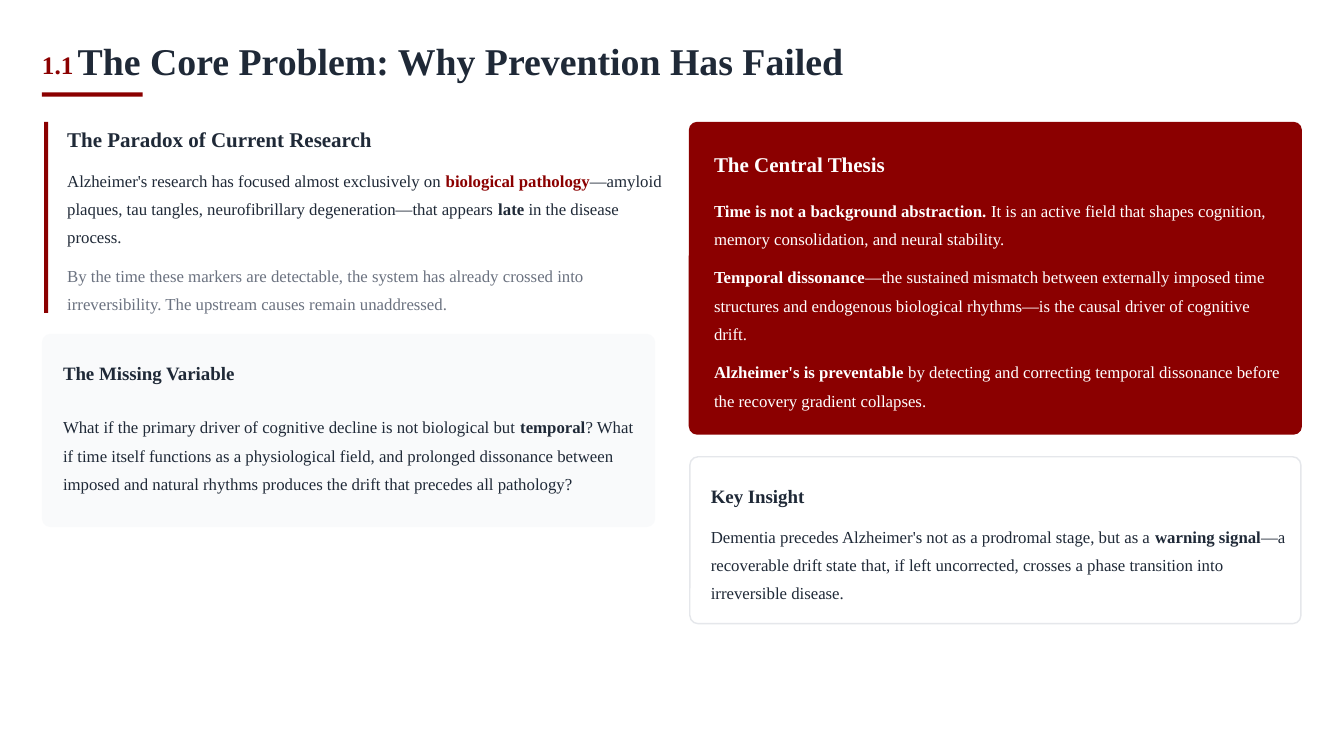
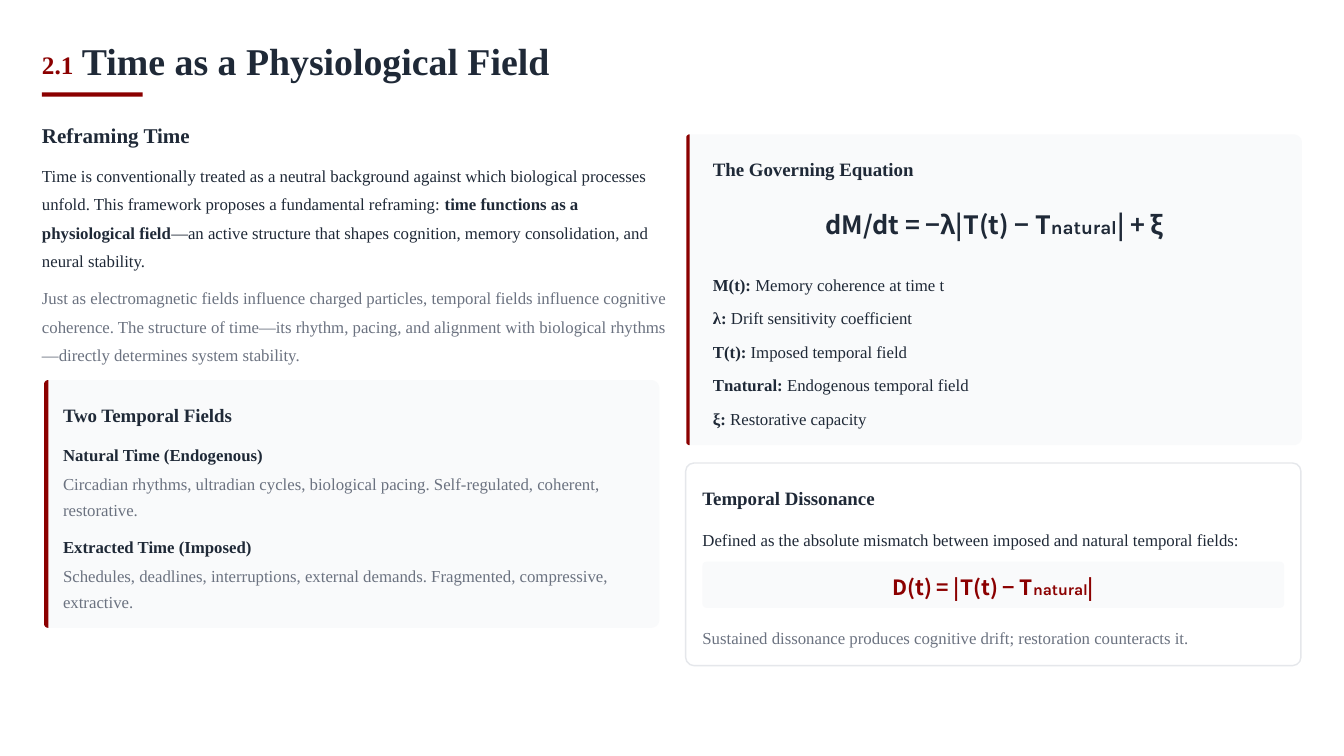
from dataclasses import dataclass
from math import cos, pi, sin
from typing import NamedTuple, Optional

from pptx import Presentation
from pptx.dml.color import RGBColor
from pptx.enum.shapes import MSO_SHAPE as Preset
from pptx.enum.text import MSO_ANCHOR as Anchor, MSO_AUTO_SIZE as AutoSize, PP_ALIGN as Align
from pptx.util import Emu, Inches, Pt

CELLS_PER_INCH = 24  # the slide is a grid of 320 columns by 180 rows
COLUMNS, ROWS = 320, 180


@dataclass(frozen=True)
class Theme:
    accent: str = "8B0000"
    ink: str = "1F2937"
    muted: str = "6B7280"
    panel: str = "F9FAFB"
    border: str = "E5E7EB"
    white: str = "FFFFFF"
    serif: str = "Times New Roman"
    math: str = "Noto Sans CJK SC"
    subscript: str = "Karla"
    radius: float = 2


THEME = Theme()


@dataclass(frozen=True)
class Style:
    size: float
    spacing: float
    row: float  # grid rows taken by one line
    color: str = THEME.ink
    bold: bool = False
    font: str = THEME.serif
    align: Align = Align.LEFT


NUMBER = Style(18, 1.1, 8, THEME.accent, True)
TITLE = Style(27, 0.9, 10, bold=True)
HEADING = Style(15, 1.2, 7, bold=True)
HEADING_LIGHT = Style(15, 1.2, 7, THEME.white, True)
SUBHEADING = Style(13.5, 1.3, 7, bold=True)
BODY = Style(12, 1.4, 6.5)
BODY_LIGHT = Style(12, 1.4, 6.5, THEME.white)
BODY_MUTED = Style(12, 1.4, 6.5, THEME.muted)
LABEL = Style(12, 1.3, 6, bold=True)
ITEM = Style(12, 1.3, 6)
ITEM_MUTED = Style(12, 1.3, 6, THEME.muted)
EQUATION = Style(18, 1.1, 8, THEME.ink, True, THEME.math, Align.CENTER)
EQUATION_SMALL = Style(15, 1.2, 7, THEME.accent, True, THEME.math, Align.CENTER)


class Box(NamedTuple):
    left: float
    top: float
    width: float
    height: float


class Span(NamedTuple):
    text: str
    bold: Optional[bool] = None
    color: Optional[str] = None
    size: Optional[float] = None
    font: Optional[str] = None


class Block(NamedTuple):
    top: float
    style: Style
    spans: tuple[Span, ...]
    lines: int = 1


def strong(text: str, color: Optional[str] = None) -> Span:
    return Span(text, True, color)


def sub(text: str, size: float) -> Span:
    return Span(text, size=size, font=THEME.subscript)


def block(top: float, style: Style, *parts: str | Span, lines: int = 1) -> Block:
    spans = tuple(Span(part) if isinstance(part, str) else part for part in parts)
    return Block(top, style, spans, lines)


def cells(count: float) -> Emu:
    return Emu(round(Inches(1) * count / CELLS_PER_INCH))


def place(box: Box) -> list[Emu]:
    return [cells(value) for value in box]


# Text

def write(shape, style: Style, spans: tuple[Span, ...]) -> None:
    frame = shape.text_frame
    frame.word_wrap = True
    frame.auto_size = AutoSize.NONE
    frame.vertical_anchor = Anchor.MIDDLE
    frame.margin_left = frame.margin_right = frame.margin_top = frame.margin_bottom = 0
    para = frame.paragraphs[0]
    para.alignment = style.align
    para.line_spacing = style.spacing
    for span in spans:
        run = para.add_run()
        run.text = span.text
        run.font.name = span.font or style.font
        run.font.size = Pt(span.size or style.size)
        run.font.bold = style.bold if span.bold is None else span.bold
        run.font.color.rgb = RGBColor.from_string(span.color or style.color)


def add_column(page, left: float, width: float, *blocks: Block) -> None:
    for item in blocks:
        box = Box(left, item.top, width, item.lines * item.style.row)
        write(page.shapes.add_textbox(*place(box)), item.style, item.spans)


# Shapes

def paint(shape, fill: Optional[str], line: Optional[str] = None) -> None:
    shape.shadow.inherit = False
    if fill:
        shape.fill.solid()
        shape.fill.fore_color.rgb = RGBColor.from_string(fill)
    else:
        shape.fill.background()
    if line:
        shape.line.color.rgb = RGBColor.from_string(line)
        shape.line.width = Pt(1)
    else:
        shape.line.fill.background()


def add_bar(page, box: Box) -> None:
    paint(page.shapes.add_shape(Preset.RECTANGLE, *place(box)), THEME.accent)


def add_card(page, box: Box, fill: Optional[str], line: Optional[str] = None,
             radius: float = THEME.radius) -> None:
    card = page.shapes.add_shape(Preset.ROUNDED_RECTANGLE, *place(box))
    card.adjustments[0] = radius / min(box.width, box.height)
    paint(card, fill, line)


def add_outline(page, box: Box, left_radius: float, right_radius: float, fill: str) -> None:
    """Draw a box whose left and right corners have their own radii."""
    right, bottom = box.left + box.width, box.top + box.height
    corners = (
        (box.left + left_radius, box.top + left_radius, left_radius),
        (right - right_radius, box.top + right_radius, right_radius),
        (right - right_radius, bottom - right_radius, right_radius),
        (box.left + left_radius, bottom - left_radius, left_radius),
    )
    steps = 8
    points = []
    for quarter, (x, y, radius) in enumerate(corners):
        for step in range(steps + 1 if radius else 1):
            angle = pi + (quarter + step / steps) * pi / 2
            points.append((cells(x + radius * cos(angle)), cells(y + radius * sin(angle))))
    builder = page.shapes.build_freeform(*points[0], scale=1.0)
    builder.add_line_segments(points[1:], close=True)
    paint(builder.convert_to_shape(), fill)


def add_accent_card(page, box: Box, bar: float) -> None:
    add_outline(page, box, bar, THEME.radius, THEME.panel)
    add_outline(page, box._replace(width=bar), bar, 0, THEME.accent)


# Slides

def add_page(deck, number: str, title: str, title_left: float):
    page = deck.slides.add_slide(deck.slide_layouts[5])
    heading = page.shapes.title
    heading.left, heading.top, heading.width, heading.height = place(
        Box(title_left, 10, 200, TITLE.row))
    write(heading, TITLE, (Span(title),))
    add_column(page, 10, title_left - 10, block(11, NUMBER, number))
    add_bar(page, Box(10, 22, 24, 1))
    return page


def build_problem(deck) -> None:
    page = add_page(deck, "1.1", "The Core Problem: Why Prevention Has Failed", 18.5)

    # Paradox
    add_bar(page, Box(10.5, 29, 1, 45.5))
    add_column(
        page, 16, 142.25,
        block(29, HEADING, "The Paradox of Current Research"),
        block(39, BODY, "Alzheimer's research has focused almost exclusively on ",
              strong("biological pathology", THEME.accent),
              "—amyloid plaques, tau tangles, neurofibrillary degeneration—that appears ",
              strong("late"), " in the disease process.", lines=3),
        block(61.5, BODY_MUTED, "By the time these markers are detectable, the system has already "
              "crossed into irreversibility. The upstream causes remain unaddressed.", lines=2))

    # Missing variable
    add_card(page, Box(10, 79.5, 146, 46), THEME.panel)
    add_column(
        page, 15, 138,
        block(84.5, SUBHEADING, "The Missing Variable"),
        block(94.5, BODY, "What if the primary driver of cognitive decline is not biological but ",
              strong("temporal"), "? What if time itself functions as a physiological field, and "
              "prolonged dissonance between imposed and natural rhythms produces the drift that "
              "precedes all pathology?", lines=4))

    # Thesis
    add_card(page, Box(164, 29, 146, 74.5), THEME.accent)
    add_column(
        page, 170, 136,
        block(35, HEADING_LIGHT, "The Central Thesis"),
        block(46, BODY_LIGHT, strong("Time is not a background abstraction."),
              " It is an active field that shapes cognition, memory consolidation, and neural "
              "stability.", lines=2),
        block(62, BODY_LIGHT, strong("Temporal dissonance"),
              "—the sustained mismatch between externally imposed time structures and endogenous "
              "biological rhythms—is the causal driver of cognitive drift.", lines=3),
        block(84.5, BODY_LIGHT, strong("Alzheimer's is preventable"),
              " by detecting and correcting temporal dissonance before the recovery gradient "
              "collapses.", lines=2))

    # Insight
    add_card(page, Box(164.25, 108.75, 145.5, 39.75), None, THEME.border)
    add_column(
        page, 169.25, 137.5,
        block(113.75, SUBHEADING, "Key Insight"),
        block(123.75, BODY, "Dementia precedes Alzheimer's not as a prodromal stage, but as a ",
              strong("warning signal"), "—a recoverable drift state that, if left uncorrected, "
              "crosses a phase transition into irreversible disease.", lines=3))


def build_field(deck) -> None:
    page = add_page(deck, "2.1", "Time as a Physiological Field", 19.5)

    # Reframing
    add_column(
        page, 10, 149,
        block(28, HEADING, "Reframing Time"),
        block(38, BODY, "Time is conventionally treated as a neutral background against which "
              "biological processes unfold. This framework proposes a fundamental reframing: ",
              strong("time functions as a physiological field"), "—an active structure that shapes "
              "cognition, memory consolidation, and neural stability.", lines=4),
        block(67, BODY_MUTED, "Just as electromagnetic fields influence charged particles, temporal "
              "fields influence cognitive coherence. The structure of time—its rhythm, pacing, and "
              "alignment with biological rhythms—directly determines system stability.", lines=3))

    # Two fields
    add_accent_card(page, Box(10.5, 90.5, 146.5, 59), 1)
    add_column(
        page, 15, 140,
        block(94.5, SUBHEADING, "Two Temporal Fields"),
        block(104.5, LABEL, "Natural Time (Endogenous)"),
        block(111.5, ITEM_MUTED, "Circadian rhythms, ultradian cycles, biological pacing. "
              "Self-regulated, coherent, restorative.", lines=2),
        block(126.5, LABEL, "Extracted Time (Imposed)"),
        block(133.5, ITEM_MUTED, "Schedules, deadlines, interruptions, external demands. "
              "Fragmented, compressive, extractive.", lines=2))

    # Governing equation and its terms
    add_accent_card(page, Box(163.4, 32, 146.6, 74), 0.8)
    terms = (("M(t):", " Memory coherence at time t"), ("λ:", " Drift sensitivity coefficient"),
             ("T(t):", " Imposed temporal field"), ("Tnatural:", " Endogenous temporal field"),
             ("ξ:", " Restorative capacity"))
    add_column(
        page, 169.75, 136.5,
        block(36, SUBHEADING, "The Governing Equation"),
        *(block(64 + 8 * index, ITEM, strong(term), meaning)
          for index, (term, meaning) in enumerate(terms)))
    add_column(page, 168.25, 137.25,
               block(49, EQUATION, "dM/dt = −λ|T(t) − T", sub("natural", 13.5), "| + ξ"))

    # Dissonance
    add_card(page, Box(163.25, 110.25, 146.5, 48.25), None, THEME.border)
    add_card(page, Box(167.25, 133.75, 138.5, 11), THEME.panel, radius=1)
    add_column(
        page, 167.25, 140.5,
        block(114.25, SUBHEADING, "Temporal Dissonance"),
        block(124.25, BODY, "Defined as the absolute mismatch between imposed and natural "
              "temporal fields:"),
        block(147.75, BODY_MUTED, "Sustained dissonance produces cognitive drift; restoration "
              "counteracts it."))
    add_column(page, 166, 141,
               block(135.75, EQUATION_SMALL, "D(t) = |T(t) − T", sub("natural", 11.2), "|"))


def main() -> None:
    deck = Presentation()
    deck.slide_width, deck.slide_height = cells(COLUMNS), cells(ROWS)
    build_problem(deck)
    build_field(deck)
    deck.save("out.pptx")


if __name__ == "__main__":
    main()
